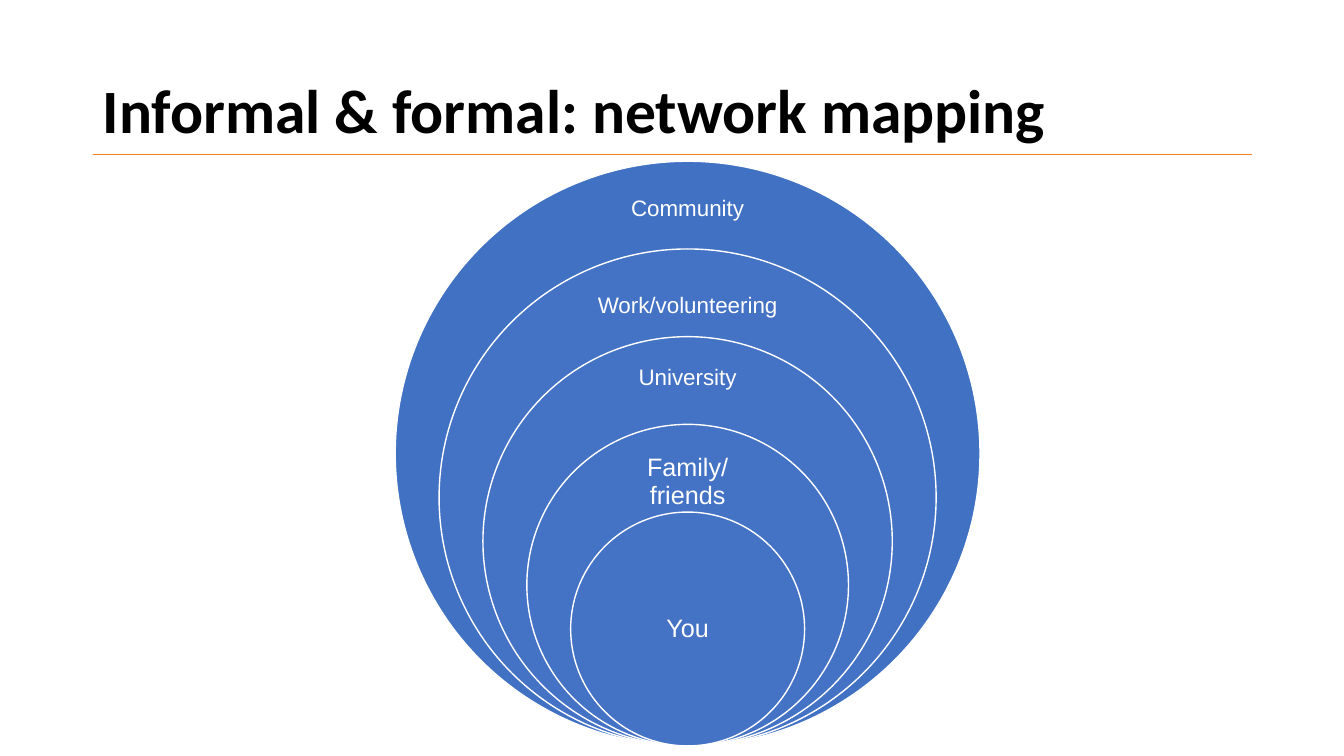
from lxml import etree
from pptx import Presentation
from pptx.dml.color import RGBColor
from pptx.enum import shapes, text
from pptx.oxml.ns import qn
from pptx.util import Inches, Pt

BLACK = RGBColor(0x00, 0x00, 0x00)
WHITE = RGBColor(0xFF, 0xFF, 0xFF)
BLUE = RGBColor(0x44, 0x72, 0xC4)
OUTER_BLUE = RGBColor(0x41, 0x71, 0xC3)
ORANGE = RGBColor(0xF5, 0x80, 0x25)

CENTRE_X, BOTTOM = 6.82, 7.4
OUTER_DIAMETER, DIAMETER_STEP = 5.8, 0.87


def write(box, words, size, font="Arial", color=WHITE, bold=False,
          align=text.PP_ALIGN.CENTER, inset=0.1):
    frame = box.text_frame
    frame.word_wrap = True
    frame.auto_size = text.MSO_AUTO_SIZE.NONE
    frame.vertical_anchor = text.MSO_ANCHOR.MIDDLE
    frame.margin_left = frame.margin_right = Inches(inset)
    frame.margin_top = frame.margin_bottom = Inches(inset)
    para = frame.paragraphs[0]
    para.text = words
    para.alignment = align
    para.line_spacing = 0.9
    for span in para.runs:
        span.font.name = font
        span.font.size = Pt(size)
        span.font.bold = bold
        span.font.color.rgb = color


deck = Presentation()
deck.slide_width, deck.slide_height = Inches(13.33), Inches(7.5)
page = deck.slides.add_slide(deck.slide_layouts[5])

rule = page.shapes.add_connector(
    shapes.MSO_CONNECTOR.STRAIGHT,
    Inches(0.92), Inches(1.53), Inches(12.42), Inches(1.53))
rule.line.color.rgb = ORANGE
rule.line.width = Pt(1)
etree.SubElement(rule._element.spPr, qn("a:effectLst"))

title = page.shapes.title
title.left, title.top = Inches(0.92), Inches(0.74)
title.width, title.height = Inches(11.5), Inches(0.77)
write(title, "Informal & formal: network mapping", 44, font="Calibri",
      color=BLACK, bold=True, align=text.PP_ALIGN.LEFT)

# Outermost first: label, size, inset, then label top, width and height
rings = [
    ("Community", 16, 0.12, 1.79, 2.17, 0.58),
    ("Work/volunteering", 16, 0.12, 2.75, 2.12, 0.57),
    ("University", 16, 0.12, 3.47, 2.1, 0.56),
    ("Family/\vfriends", 18, 0.14, 4.5, 1.72, 0.57),
    ("You", 18, 0.14, 5.66, 1.64, 1.16),
]
for level, (label, size, inset, top, width, height) in enumerate(rings):
    diameter = OUTER_DIAMETER - level * DIAMETER_STEP
    circle = page.shapes.add_shape(
        shapes.MSO_SHAPE.OVAL,
        Inches(CENTRE_X - diameter / 2), Inches(BOTTOM - diameter),
        Inches(diameter), Inches(diameter))
    circle.shadow.inherit = False
    circle.fill.solid()
    circle.fill.fore_color.rgb = BLUE if level else OUTER_BLUE
    circle.line.color.rgb = WHITE
    circle.line.width = Pt(1)

    box = page.shapes.add_textbox(
        Inches(CENTRE_X - width / 2), Inches(top), Inches(width), Inches(height))
    write(box, label, size, inset=inset)

deck.save("out.pptx")
